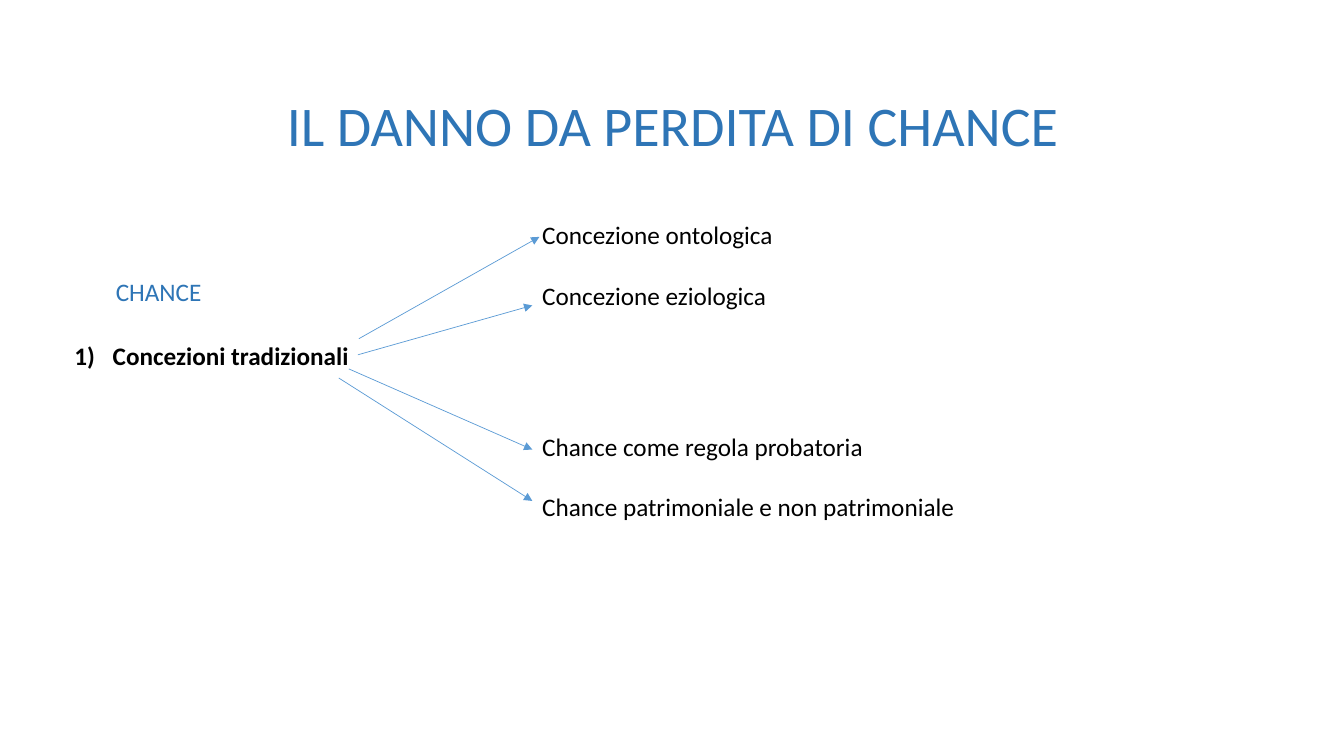
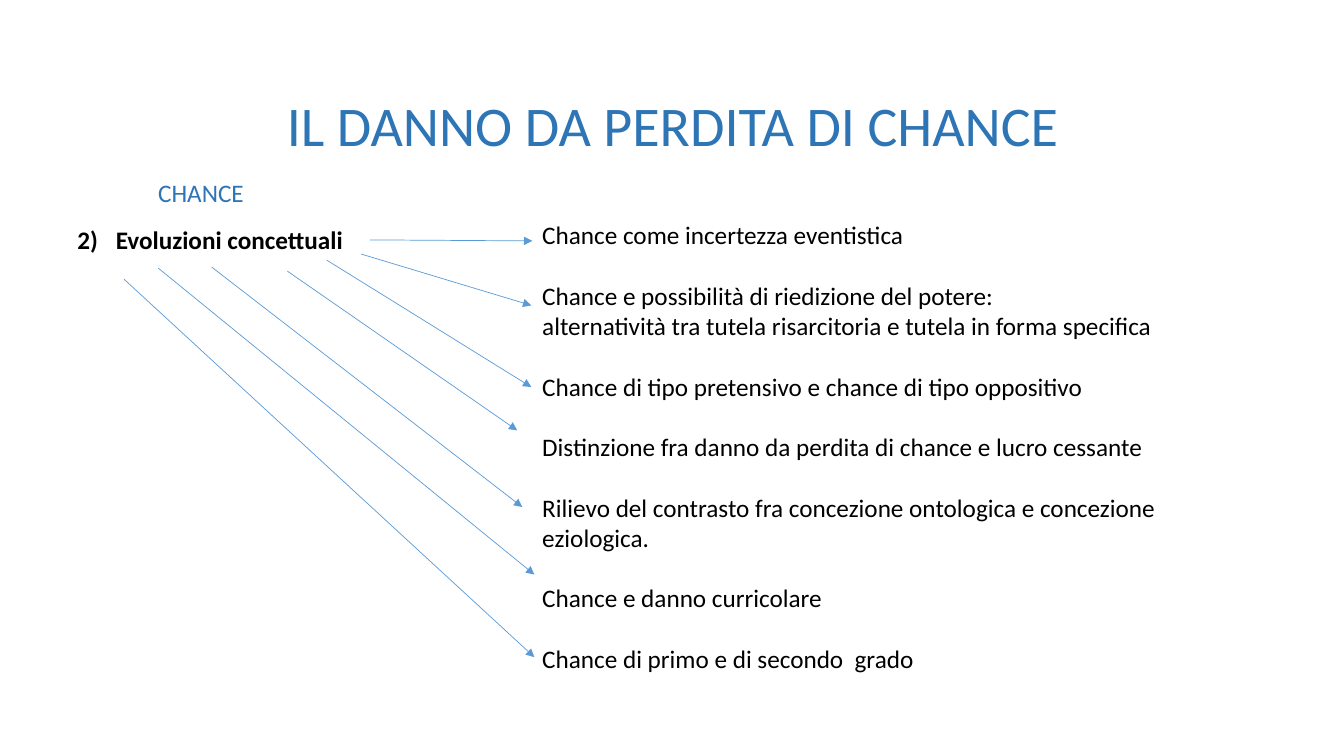
"""Build two slides on loss-of-chance damages, with arrows from a theme to its points."""
from lxml import etree
from pptx import Presentation
from pptx.dml.color import RGBColor
from pptx.enum.shapes import MSO_CONNECTOR as CONN
from pptx.enum.text import PP_ALIGN as ALIGN
from pptx.oxml.ns import qn
from pptx.util import Emu, Pt

PX = 9144
TITLE_BLUE = RGBColor(0x2E, 0x75, 0xB6)
ARROW_BLUE = RGBColor(0x5B, 0x9B, 0xD5)
BLACK = RGBColor(0, 0, 0)
LINE_PT = 21.6
TITLE_FMT = {"name": "Calibri", "size": Pt(40)}
BODY_FMT = {"name": "Calibri", "size": Pt(18)}
THEME_FMT = {**BODY_FMT, "bold": True}

SLIDES = [
    {
        "label": (105, 269, 106, 40),
        "theme": ("Concezioni tradizionali", 1, (64, 333, 293, 71)),
        "points_box": (528, 213, 434, 464),
        "points": [
            ("Concezione ontologica", 0),
            ("Concezione eziologica", 1),
            ("Chance come regola probatoria", 4),
            ("Chance patrimoniale e non patrimoniale", 1),
        ],
        "arrows": [
            (356, 336, 535, 235),
            (355, 352, 528, 303),
            (346, 366, 528, 446),
            (336, 375, 528, 497),
        ],
    },
    {
        "label": (147, 171, 106, 40),
        "theme": ("Evoluzioni concettuali", 2, (67, 218, 285, 94)),
        "points_box": (528, 213, 636, 495),
        "points": [
            ("Chance come incertezza eventistica", 0),
            ("Chance e possibilità di riedizione del potere:", 1),
            ("alternatività tra tutela risarcitoria e tutela in forma specifica", 0),
            ("Chance di tipo pretensivo e chance di tipo oppositivo", 1),
            ("Distinzione fra danno da perdita di chance e lucro cessante", 1),
            ("Rilievo del contrasto fra concezione ontologica e concezione", 1),
            ("eziologica.", 0),
            ("Chance e danno curricolare", 1),
            ("Chance di primo e di secondo  grado", 1),
        ],
        "arrows": [
            (367, 238, 528, 239),
            (358, 252, 527, 303),
            (324, 258, 527, 384),
            (285, 269, 513, 427),
            (210, 265, 518, 503),
            (157, 266, 530, 570),
            (123, 277, 530, 652),
        ],
    },
]


def add_text(s, box, lines, fmt, color, align=ALIGN.LEFT):
    """Add a text box; each line is its text and the blank lines above it."""
    tf = s.shapes.add_textbox(*(Emu(v * PX) for v in box)).text_frame
    tf.word_wrap = True
    for i, (text, gap) in enumerate(lines):
        p = tf.add_paragraph() if i else tf.paragraphs[0]
        p.alignment = align
        p.space_before = Pt(gap * LINE_PT)
        r = p.add_run()
        r.text = text
        for key, value in fmt.items():
            setattr(r.font, key, value)
        r.font.color.rgb = color
    return tf


def add_arrow(s, ends):
    """Add a thin arrow between two points."""
    cn = s.shapes.add_connector(CONN.STRAIGHT, *(Emu(v * PX) for v in ends))
    cn.line.color.rgb = ARROW_BLUE
    cn.line.width = Pt(0.5)
    etree.SubElement(cn.line._get_or_add_ln(), qn("a:tailEnd"), type="triangle")
    etree.SubElement(cn._element.spPr, qn("a:effectLst"))


prs = Presentation()
prs.slide_width, prs.slide_height = Emu(1333 * PX), Emu(750 * PX)

for data in SLIDES:
    s = prs.slides.add_slide(prs.slide_layouts[6])
    add_text(s, (270, 85, 794, 77), [("IL DANNO DA PERDITA DI CHANCE", 0)],
             TITLE_FMT, TITLE_BLUE, ALIGN.CENTER)
    add_text(s, data["label"], [("CHANCE", 0)], BODY_FMT, TITLE_BLUE)

    text, number, box = data["theme"]
    tf = add_text(s, box, [(text, 0)], THEME_FMT, BLACK)
    pPr = tf.paragraphs[0]._p.get_or_add_pPr()
    pPr.set("marL", str(38 * PX))
    pPr.set("indent", str(-38 * PX))
    etree.SubElement(pPr, qn("a:buAutoNum"), type="arabicParenR", startAt=str(number))

    add_text(s, data["points_box"], data["points"], BODY_FMT, BLACK)
    for ends in data["arrows"]:
        add_arrow(s, ends)

prs.save("out.pptx")
